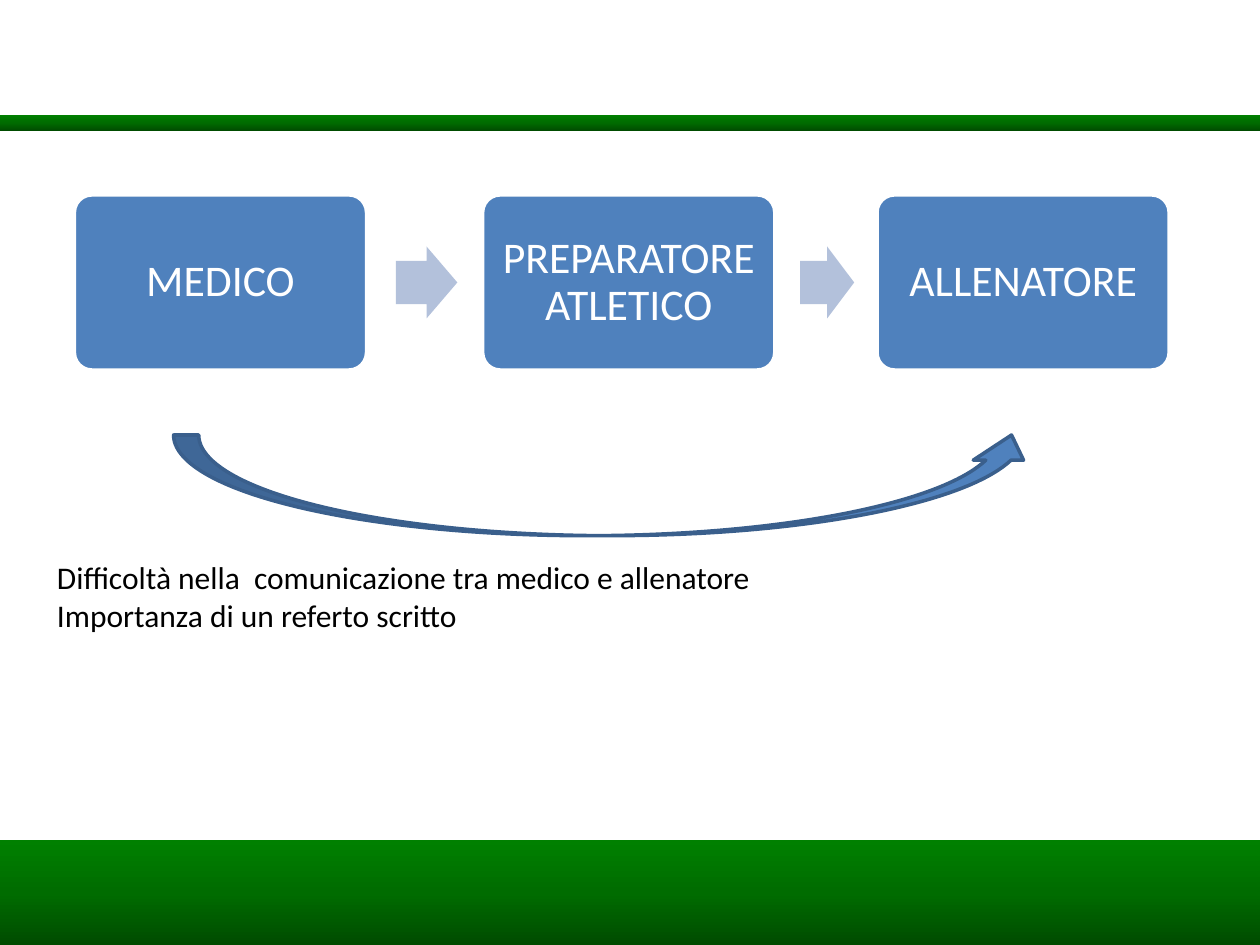
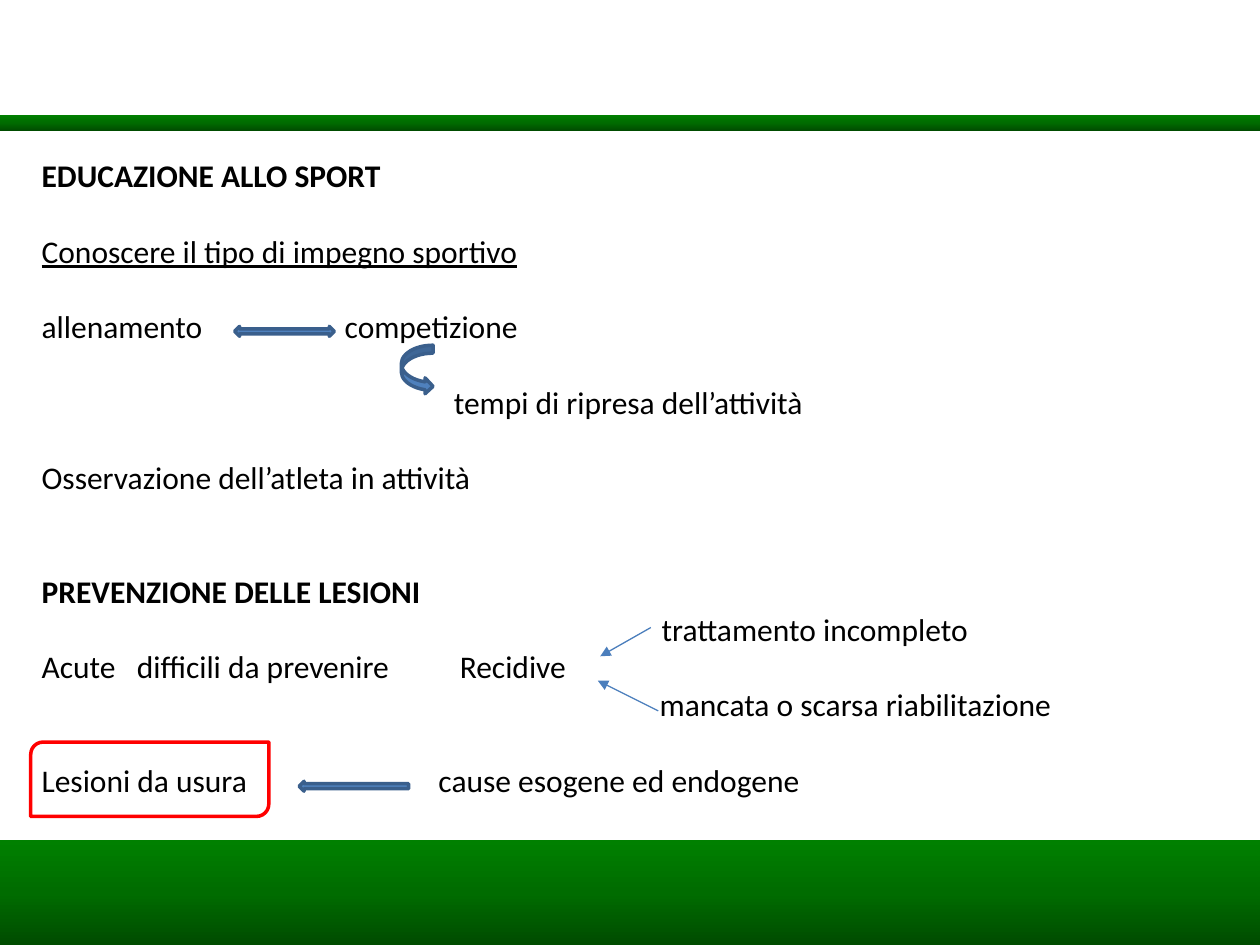
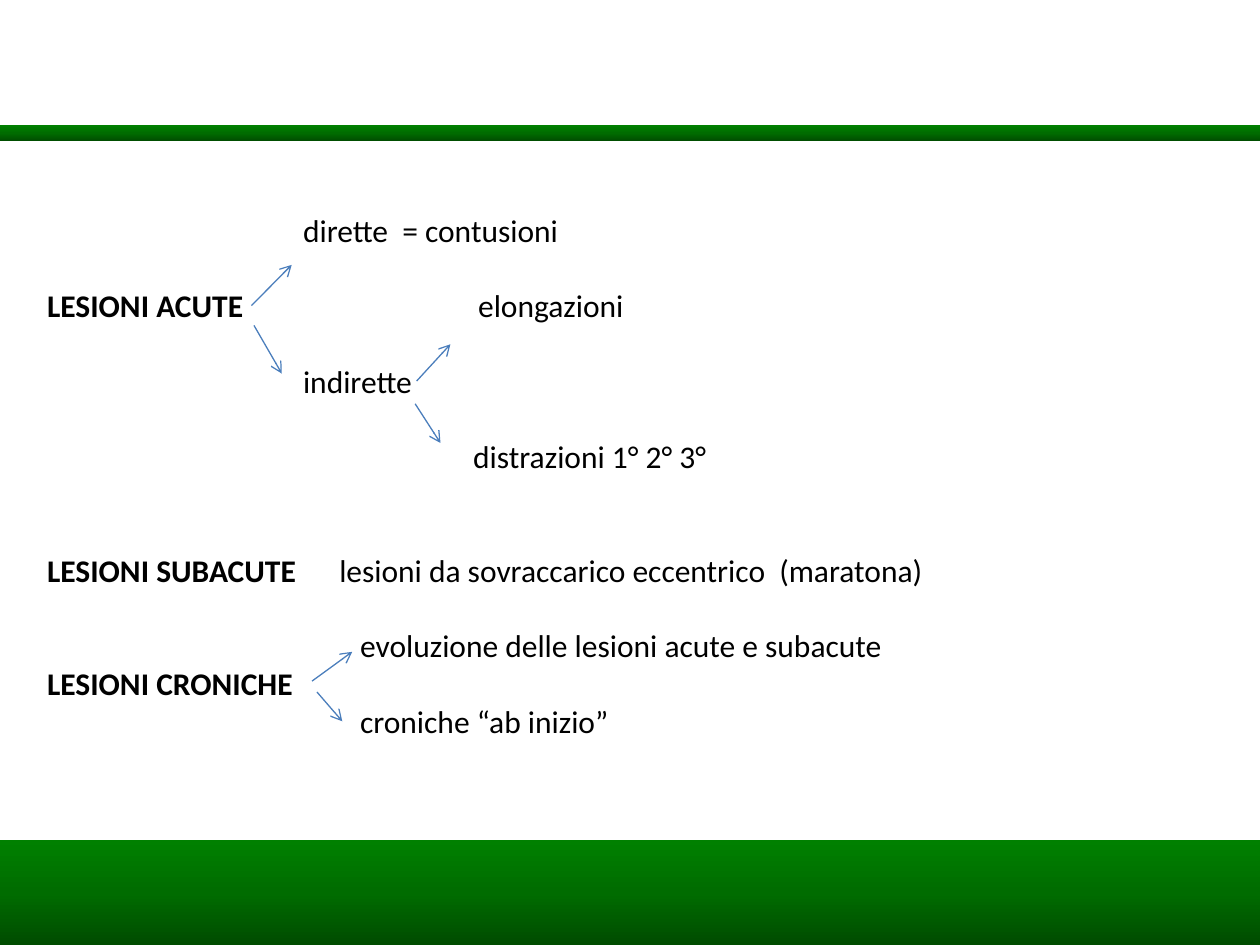
from copy import deepcopy
from dataclasses import dataclass, field

from lxml.etree import SubElement
from pptx import Presentation
from pptx.dml.color import RGBColor
from pptx.enum.shapes import MSO_CONNECTOR, MSO_SHAPE
from pptx.enum.text import MSO_ANCHOR, PP_ALIGN
from pptx.oxml.ns import qn
from pptx.util import Cm, Pt

BLACK = RGBColor(0x00, 0x00, 0x00)
WHITE = RGBColor(0xFF, 0xFF, 0xFF)
RED = RGBColor(0xFF, 0x00, 0x00)
BLUE = RGBColor(0x4F, 0x81, 0xBD)
BLUE_EDGE = RGBColor(0x3A, 0x5F, 0x8C)
BLUE_LINE = RGBColor(0x4B, 0x7E, 0xBC)
BLUE_PALE = RGBColor(0xB3, 0xC1, 0xDB)
GREENS = [RGBColor(0x00, 0x4C, 0x00), RGBColor(0x00, 0x6C, 0x00), RGBColor(0x00, 0x80, 0x00)]

SLIDE_W, SLIDE_H = 25.4, 19.05
BAND_TOP = 16.93
FONT = "Calibri"
LINE_PITCH = Pt(21.6)
BOLD = {"bold": True}
UNDERLINE = {"underline": True}


@dataclass
class Line:
    text: str
    gap: int = 0
    indent: float = 0
    fmt: dict = field(default_factory=dict)
    labels: list = field(default_factory=list)


def add_shape(s, kind, left, top, width, height, fill=None, edge=None, adj=()):
    sp = s.shapes.add_shape(kind, Cm(left), Cm(top), Cm(width), Cm(height))
    sp.shadow.inherit = False
    for i, value in enumerate(adj):
        sp.adjustments[i] = value
    if fill is None:
        sp.fill.background()
    else:
        sp.fill.solid()
        sp.fill.fore_color.rgb = fill
    if edge is None:
        sp.line.fill.background()
    else:
        sp.line.color.rgb = edge
        sp.line.width = Pt(2)
    return sp


def add_run(p, text, size, color, **extra):
    r = p.add_run()
    r.text = text
    r.font.color.rgb = color
    for name, value in {"name": FONT, "size": Pt(size), **extra}.items():
        setattr(r.font, name, value)


def add_arrow(s, x1, y1, x2, y2, head):
    cx = s.shapes.add_connector(MSO_CONNECTOR.STRAIGHT, Cm(x1), Cm(y1), Cm(x2), Cm(y2))
    cx.line.color.rgb = BLUE_LINE
    cx.line.width = Pt(0.75)
    SubElement(cx.line._get_or_add_ln(), qn("a:tailEnd"), type=head)
    SubElement(cx._element.spPr, qn("a:effectLst"))


def add_band(s, top, height):
    sp = add_shape(s, MSO_SHAPE.RECTANGLE, 0, top, SLIDE_W, height)
    sp.fill.gradient()
    sp.fill.gradient_angle = 90
    first = sp._element.spPr.find(".//" + qn("a:gs"))
    first.addnext(deepcopy(first))
    for stop, color, position in zip(sp.fill.gradient_stops, GREENS, (0, 0.5, 1)):
        stop.color.rgb = color
        stop.position = position


def add_slide(prs, rule_top):
    s = prs.slides.add_slide(prs.slide_layouts[6])
    add_band(s, BAND_TOP, SLIDE_H - BAND_TOP)
    add_band(s, rule_top, 0.33)
    return s


def add_notes(s, left, top, width, height, lines, anchor=MSO_ANCHOR.TOP):
    tf = s.shapes.add_textbox(Cm(left), Cm(top), Cm(width), Cm(height)).text_frame
    tf.word_wrap = True
    tf.vertical_anchor = anchor
    row = 0
    for i, line in enumerate(lines):
        p = tf.add_paragraph() if i else tf.paragraphs[0]
        if line.gap:
            p.space_before = line.gap * LINE_PITCH
        if line.indent:
            pPr = p._p.get_or_add_pPr()
            pPr.set("marL", str(Cm(line.indent)))
            pPr.set("indent", "0")
        add_run(p, line.text, 18, BLACK, **line.fmt)
        row += line.gap
        for x, text in line.labels:
            add_notes(s, left + x, top + (row * LINE_PITCH) / Cm(1), width - x, 1.03,
                      [Line(text)])
        row += 1


def add_flow(s, left, top, box_w, box_h):
    roles = [("MEDICO", 0), ("PREPARATORE ATLETICO", 8.23), ("ALLENATORE", 16.18)]
    arrow_h = 1.45
    for text, x in roles:
        sp = add_shape(s, MSO_SHAPE.ROUNDED_RECTANGLE, left + x, top, box_w, box_h,
                       BLUE, WHITE, [0.1])
        tf = sp.text_frame
        frame = {"word_wrap": True, "vertical_anchor": MSO_ANCHOR.MIDDLE,
                 "margin_left": Cm(0.2), "margin_right": Cm(0.2)}
        for name, value in frame.items():
            setattr(tf, name, value)
        p = tf.paragraphs[0]
        p.alignment = PP_ALIGN.CENTER
        p.line_spacing = 0.9
        add_run(p, text, 25, WHITE)
    for x, width in [(6.48, 1.24), (14.63, 1.09)]:
        add_shape(s, MSO_SHAPE.RIGHT_ARROW, left + x, top + (box_h - arrow_h) / 2,
                  width, arrow_h, BLUE_PALE, adj=[0.6, 0.5])


def add_diagram(s, left, top, width, height, lines, shapes, arrows, head):
    add_notes(s, left, top, width, height, lines)
    for kind, x, y, w, h, fill, edge in shapes:
        add_shape(s, kind, left + x, top + y, w, h, fill, edge)
    for x1, y1, x2, y2 in arrows:
        add_arrow(s, left + x1, top + y1, left + x2, top + y2, head)


def communication_slide(prs):
    s = add_slide(prs, 2.31)
    add_flow(s, 1.5, 3.93, 5.89, 3.53)
    add_notes(s, 0.9, 9.57, 14.53, 3.33, [
        Line("Difficoltà nella  comunicazione tra medico e allenatore"),
        Line("Importanza di un referto scritto"),
    ], MSO_ANCHOR.BOTTOM)
    add_shape(s, MSO_SHAPE.CURVED_UP_ARROW, 3.5, 8.77, 17.4, 2.03, BLUE, BLUE_EDGE)


def prevention_slide(prs):
    s = add_slide(prs, 2.31)
    lines = [
        Line("EDUCAZIONE ALLO SPORT", fmt=BOLD),
        Line("Conoscere il tipo di impegno sportivo", gap=1, fmt=UNDERLINE),
        Line("allenamento", gap=1, labels=[(6.11, "competizione")]),
        Line("tempi di ripresa dell’attività", gap=1, indent=8.31),
        Line("Osservazione dell’atleta in attività", gap=1),
        Line("PREVENZIONE DELLE LESIONI", gap=2, fmt=BOLD),
        Line("trattamento incompleto", indent=12.5),
        Line("Acute", labels=[(1.92, "difficili da prevenire"), (8.43, "Recidive")]),
        Line("mancata o scarsa riabilitazione", indent=12.46),
        Line("Lesioni da usura", gap=1, labels=[(8, "cause esogene ed endogene")]),
    ]
    shapes = [
        (MSO_SHAPE.LEFT_RIGHT_ARROW, 4.14, 3.56, 2.01, 0.2, BLUE, BLUE_EDGE),
        (MSO_SHAPE.CURVED_RIGHT_ARROW, 7.5, 3.94, 0.64, 0.99, BLUE, BLUE_EDGE),
        (MSO_SHAPE.LEFT_ARROW, 5.44, 12.73, 2.21, 0.2, BLUE, BLUE_EDGE),
        (MSO_SHAPE.ROUND_2_DIAG_RECTANGLE, 0.03, 11.94, 4.8, 1.5, None, RED),
    ]
    arrows = [(12.53, 9.63, 11.51, 10.21), (12.68, 11.31, 11.46, 10.7)]
    add_diagram(s, 0.59, 3.02, 24.1, 14.1, lines, shapes, arrows, "triangle")


def lesions_slide(prs):
    s = add_slide(prs, 2.52)
    lines = [
        Line("dirette  = contusioni", indent=5.16),
        Line("LESIONI ACUTE", gap=1, fmt=BOLD, labels=[(8.69, "elongazioni")]),
        Line("indirette", gap=1, indent=5.16),
        Line("distrazioni 1° 2° 3°", gap=1, indent=8.59),
        Line("LESIONI SUBACUTE", gap=2, fmt=BOLD,
             labels=[(5.89, "lesioni da sovraccarico eccentrico  (maratona)")]),
        Line("evoluzione delle lesioni acute e subacute", gap=1, indent=6.31),
        Line("LESIONI CRONICHE", fmt=BOLD),
        Line("croniche “ab inizio”", indent=6.31),
    ]
    arrows = [
        (4.37, 2.04, 5.18, 1.22), (4.42, 2.44, 4.98, 3.41),
        (7.7, 3.56, 8.38, 2.82), (7.67, 4.02, 8.18, 4.81),
        (5.59, 9.61, 6.4, 9.02), (5.69, 9.83, 6.2, 10.42),
    ]
    add_diagram(s, 0.7, 4.12, 23.98, 11.79, lines, [], arrows, "arrow")


def main():
    prs = Presentation()
    prs.slide_width, prs.slide_height = Cm(SLIDE_W), Cm(SLIDE_H)
    for build in (communication_slide, prevention_slide, lesions_slide):
        build(prs)
    prs.save("out.pptx")


if __name__ == "__main__":
    main()
